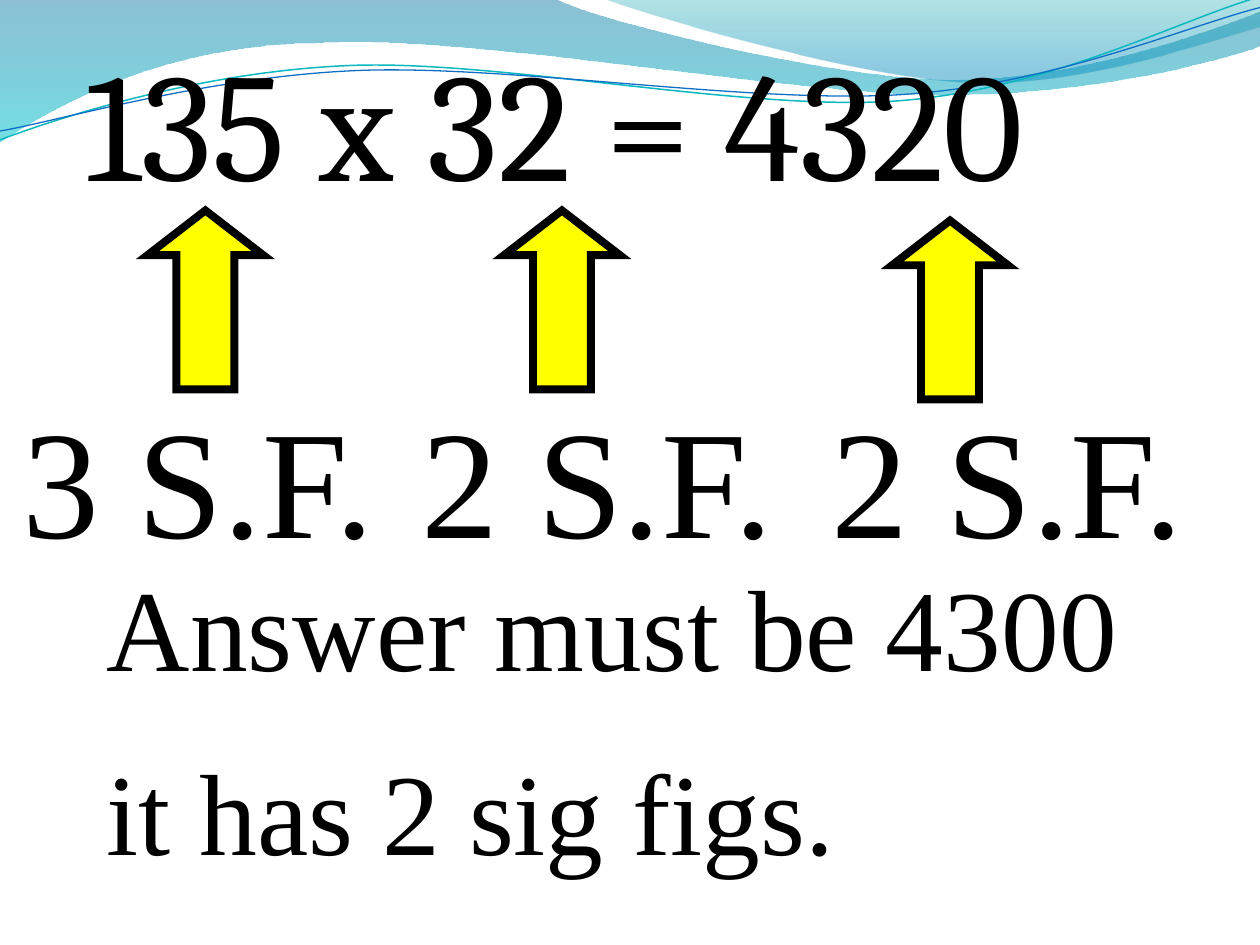
from math import cos, radians, sin

from lxml import etree
from pptx import Presentation
from pptx.dml.color import RGBColor
from pptx.enum.shapes import MSO_SHAPE as Shape
from pptx.enum.text import MSO_ANCHOR as Anchor, MSO_AUTO_SIZE as Fit, PP_ALIGN as Align
from pptx.oxml.ns import qn
from pptx.util import Inches, Pt

BLACK = RGBColor(0, 0, 0)
YELLOW = RGBColor(0xFF, 0xFF, 0)
STEEL = RGBColor(0, 0x74, 0xA1)
CYAN = RGBColor(0, 0xC6, 0xCF)
TEAL = RGBColor(0, 0xA1, 0xA9)
AZURE = RGBColor(0, 0x8B, 0xBF)
AQUA = RGBColor(0x0A, 0xB8, 0xBF)
BLUE = RGBColor(0x0F, 0x6F, 0xC6)
SERIF = "Times New Roman"
TILT = 2.7

BANDS = [
    ([(0, -0.01), (4.4, -0.01),
      (4.76, 0.17, 6.64, 0.63, 7.58, 0.63),
      (8.53, 0.63, 9.58, 0.26, 10, 0.09), (10.01, 0.36),
      (9.83, 0.44, 8.7, 0.76, 7.46, 0.75),
      (6.22, 0.75, 3.82, 0.28, 2.57, 0.34),
      (1.29, 0.35, 0.46, 0.83, -0.01, 1.13)],
     [(0, STEEL, 45), (1, CYAN, 55)]),
    ([(4.79, -0.01),
      (5.09, 0.11, 6.82, 0.62, 7.69, 0.65),
      (8.56, 0.69, 9.61, 0.32, 10, 0.21), (10, 0)],
     [(0, TEAL, 30), (0.8, AZURE, 45)]),
]
WAVES = [
    ([(0, 1.11),
      (0.48, 0.93, 1.58, 0.57, 2.77, 0.52),
      (3.95, 0.47, 5.93, 0.89, 7.13, 0.8),
      (8.33, 0.71, 9.38, 0.15, 9.98, -0.02)], (4.99, 0.575), AQUA, 0.85),
    ([(0, 1.04),
      (0.47, 0.96, 1.64, 0.61, 2.83, 0.56),
      (4.03, 0.51, 5.97, 0.83, 7.17, 0.75),
      (8.36, 0.67, 9.41, 0.21, 10, 0.06)], (4.995, 0.59), BLUE, 0.75),
]


def pairs(seg):
    return list(zip(seg[::2], seg[1::2]))


def turn(seg, mid):
    c, s = cos(radians(TILT)), sin(radians(TILT))
    out = []
    for x, y in pairs(seg):
        dx, dy = x - mid[0], y - mid[1]
        out += [mid[0] + dx * c - dy * s, mid[1] + dx * s + dy * c]
    return tuple(out)


def add_path(slide, path, close):
    pts = [(Inches(x), Inches(y)) for seg in path for x, y in pairs(seg)]
    pen = slide.shapes.build_freeform(*pts[0])
    pen.add_line_segments(pts[1:], close=close)
    shape = pen.convert_to_shape()
    shape.shadow.inherit = False
    lines = iter(list(shape._element.iter(qn("a:lnTo"))))
    for seg in path[1:]:
        line = next(lines)
        if len(seg) == 6:
            line.addprevious(curve := etree.Element(qn("a:cubicBezTo")))
            for old in (line, next(lines), next(lines)):
                curve.append(old[0])
                old.getparent().remove(old)
    return shape


def add_band(slide, path, stops):
    band = add_path(slide, path, True)
    band.line.fill.background()
    band.fill.gradient()
    band.fill.gradient_angle = 270
    for stop, (place, color, _) in zip(band.fill.gradient_stops, stops):
        stop.position = place
        stop.color.rgb = color
    tints = list(band._element.spPr.iter(qn("a:srgbClr")))
    for tint, (_, _, alpha) in zip(tints, stops):
        etree.SubElement(tint, qn("a:alpha"), val=str(alpha * 1000))


def add_wave(slide, path, mid, color, width):
    wave = add_path(slide, [turn(seg, mid) for seg in path], False)
    wave.rotation = 360 - TILT
    wave.fill.background()
    wave.line.color.rgb = color
    wave.line.width = Pt(width)


def put_text(box, text, size=88, font=SERIF, before=17.6, gap=0, line=1,
             anchor=Anchor.TOP, foot=0.05):
    frame = box.text_frame
    frame.text = text
    frame.word_wrap = True
    frame.auto_size = Fit.NONE
    frame.vertical_anchor = anchor
    frame.margin_bottom = Inches(foot)
    for i, para in enumerate(frame.paragraphs):
        para.alignment = Align.LEFT
        para.line_spacing = line
        para.space_before = Pt(gap if i else before)
        for run in para.runs:
            run.font.size = Pt(size)
            run.font.name = font
            run.font.color.rgb = BLACK


def add_text(slide, text, left, top, width, height, **style):
    box = slide.shapes.add_textbox(Inches(left), Inches(top), Inches(width), Inches(height))
    put_text(box, text, **style)


def set_title(slide, text, left, top, width, height, **style):
    title = slide.shapes.title
    title.left, title.top = Inches(left), Inches(top)
    title.width, title.height = Inches(width), Inches(height)
    put_text(title, text, **style)
    title._element.getparent().append(title._element)


def add_arrow(slide, left, top):
    arrow = slide.shapes.add_shape(
        Shape.UP_ARROW, Inches(left), Inches(top), Inches(0.92), Inches(1.42))
    arrow.adjustments[0] = 0.5
    arrow.adjustments[1] = 0.386
    arrow.shadow.inherit = False
    arrow.fill.solid()
    arrow.fill.fore_color.rgb = YELLOW
    arrow.line.color.rgb = BLACK
    arrow.line.width = Pt(4.5)
    etree.SubElement(arrow._element.spPr.find(qn("a:ln")), qn("a:miter"), lim="800000")


def main():
    deck = Presentation()
    deck.slide_width, deck.slide_height = Inches(10), Inches(7.5)
    slide = deck.slides.add_slide(deck.slide_layouts[5])
    for path, stops in BANDS:
        add_band(slide, path, stops)
    for path, mid, color, width in WAVES:
        add_wave(slide, path, mid, color, width)
    set_title(slide, "135 x 32 = 4320", 0.58, 0.17, 9.25, 1.5, font="Cambria")
    for text, left in [("3 S.F.", 0.08), ("2 S.F.", 3.25), ("2 S.F.", 6.5)]:
        add_text(slide, text, left, 3, 3.33, 1.5)
    for left, top in [(1.17, 1.67), (4, 1.67), (7.08, 1.75)]:
        add_arrow(slide, left, top)
    add_text(slide, "Answer must be 4300\nit has 2 sig figs.", 0.75, 4.5, 8.67, 2.63,
             size=66, before=0, gap=33.7, line=0.9, anchor=Anchor.MIDDLE, foot=0.15)
    deck.save("out.pptx")


if __name__ == "__main__":
    main()
